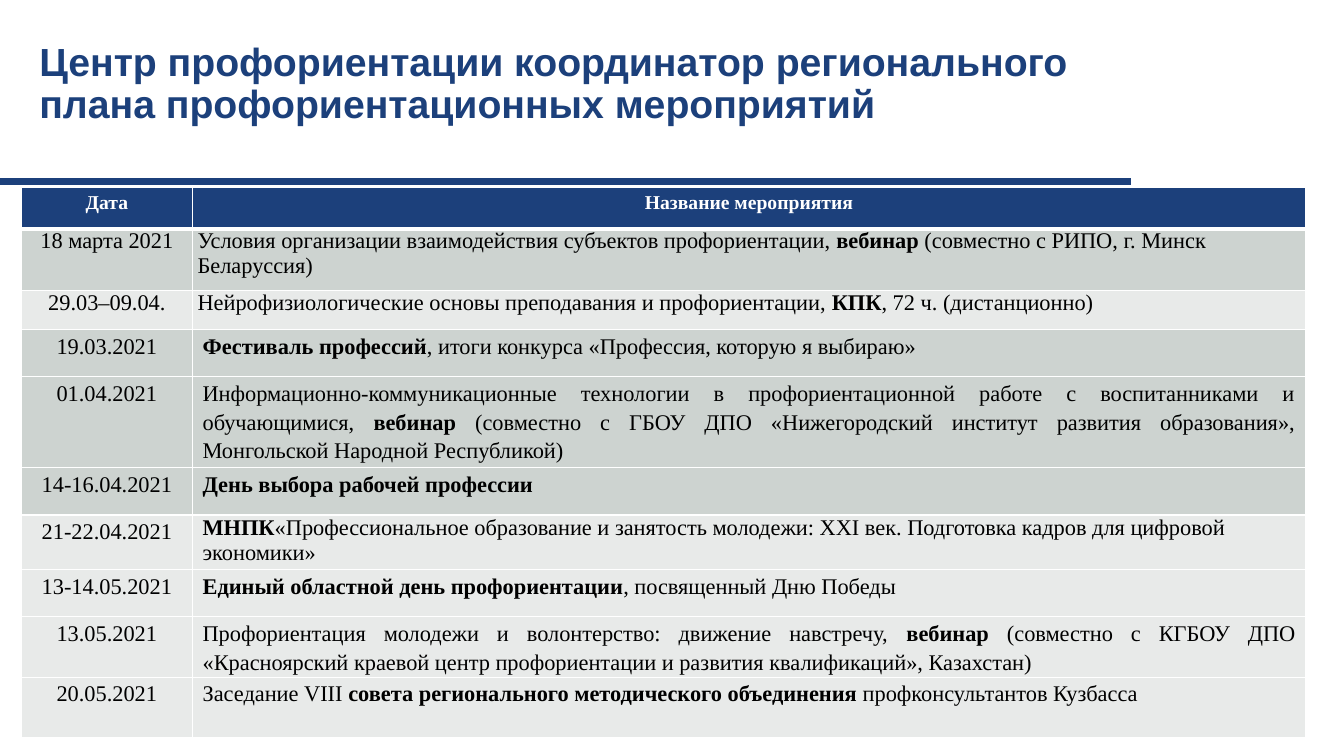
from dataclasses import dataclass

from lxml import etree
from pptx import Presentation
from pptx.dml.color import RGBColor
from pptx.enum.shapes import MSO_CONNECTOR
from pptx.enum.text import MSO_ANCHOR, MSO_AUTO_SIZE, PP_ALIGN
from pptx.oxml.ns import qn
from pptx.util import Pt

LEFT, MID, JUST = PP_ALIGN.LEFT, PP_ALIGN.CENTER, PP_ALIGN.JUSTIFY
TOP = MSO_ANCHOR.TOP
NO_FIT = MSO_AUTO_SIZE.NONE
LINE = MSO_CONNECTOR.STRAIGHT
SCALE = 9144  # EMU in one px, 100 px to the inch
TITLE_ONLY = 5


@dataclass
class Theme:
    navy: str = "1C407B"
    white: str = "FFFFFF"
    black: str = "000000"
    dark: str = "CDD3D0"
    light: str = "E8EAE9"
    sans: str = "Arial"
    serif: str = "Times New Roman"
    title: int = 28
    head: int = 14
    body: int = 16


def px(n):
    return n * SCALE


def rgb(code):
    return RGBColor.from_string(code)


class Deck:
    def __init__(self, theme, wide, high):
        self.theme = theme
        self.prs = Presentation()
        self.prs.slide_width, self.prs.slide_height = px(wide), px(high)
        self.slide = self.prs.slides.add_slide(self.prs.slide_layouts[TITLE_ONLY])

    def text(self, frame, words, font, size, color, align, gap, bold=False):
        """Add runs to the first paragraph; *stars* mark bold words."""
        para = frame.paragraphs[0]
        para.alignment, para.line_spacing = align, gap
        for i, part in enumerate(words.split("*")):
            if part:
                run = para.add_run()
                run.text = part
                run.font.name, run.font.size = font, Pt(size)
                run.font.bold = bold or i % 2 == 1
                run.font.color.rgb = rgb(color)

    def title(self, words, x, y, w, h):
        shape = self.slide.shapes.title
        shape.left, shape.top, shape.width, shape.height = map(px, (x, y, w, h))
        frame = shape.text_frame
        frame.margin_left = frame.margin_right = 0
        frame.margin_top = frame.margin_bottom = 0
        frame.word_wrap, frame.auto_size = True, NO_FIT
        frame.vertical_anchor = TOP
        t = self.theme
        self.text(frame, words, t.sans, t.title, t.navy, LEFT, 0.9, True)

    def rule(self, x, y, w, width):
        line = self.slide.shapes.add_connector(LINE, px(x), px(y), px(x + w), px(y))
        line.line.color.rgb = rgb(self.theme.navy)
        line.line.width = Pt(width)
        etree.SubElement(line._element.spPr, qn("a:effectLst"))

    def edge(self, cell, side, width):
        props = cell._tc.get_or_add_tcPr()
        line = etree.SubElement(props, qn("a:ln" + side), w=str(Pt(width)))
        fill = etree.SubElement(line, qn("a:solidFill"))
        etree.SubElement(fill, qn("a:srgbClr"), val=self.theme.white)

    def cell(self, cell, words, row, align, fill, tight, gap):
        t = self.theme
        head = row == 0
        cell.margin_left = cell.margin_right = px(5 if tight else 10)
        cell.margin_top, cell.margin_bottom = px(0 if tight else 1), 0
        cell.vertical_anchor = TOP
        thick = {0: "B", 1: "T"}.get(row)
        for side in "LRTB":
            self.edge(cell, side, 3 if side == thick else 1)
        cell.fill.solid()
        cell.fill.fore_color.rgb = rgb(fill)
        size, color = (t.head, t.white) if head else (t.body, t.black)
        self.text(cell.text_frame, words, t.serif, size, color, align, gap, head)

    def table(self, rows, x, y, cols, highs):
        shape = self.slide.shapes.add_table(
            len(rows), len(cols), px(x), px(y), px(sum(cols)), px(sum(highs)))
        grid = shape.table
        for col, wide in zip(grid.columns, cols):
            col.width = px(wide)
        for i, (date, name, fill, align, tight, gap) in enumerate(rows):
            grid.rows[i].height = px(highs[i])
            day_gap = 1.0 if tight else 1.15
            self.cell(grid.cell(i, 0), date, i, MID, fill, tight, day_gap)
            self.cell(grid.cell(i, 1), name, i, align, fill, tight, gap)


def main():
    t = Theme()
    deck = Deck(t, 1333, 750)

    # Heading and rule
    deck.rule(0, 180, 1122, 4.5)
    deck.title("Центр профориентации координатор регионального плана "
               "профориентационных мероприятий", 39, 42, 1047, 137)

    # Events: date, name, fill, alignment, tight margins, line spacing
    rows = [
        ("Дата", "Название мероприятия", t.navy, MID, False, 1.15),
        ("18 марта 2021",
         "Условия организации взаимодействия субъектов профориентации, "
         "*вебинар *(совместно с РИПО, г. Минск Беларуссия)",
         t.dark, LEFT, True, 1.0),
        ("29.03–09.04.",
         "Нейрофизиологические основы преподавания и профориентации, "
         "*КПК*, 72 ч. (дистанционно)", t.light, JUST, True, 1.0),
        ("19.03.2021",
         "*Фестиваль профессий*, итоги конкурса «Профессия, которую я выбираю»",
         t.dark, JUST, False, 1.15),
        ("01.04.2021",
         "Информационно-коммуникационные технологии в профориентационной "
         "работе с воспитанниками и обучающимися, *вебинар *(совместно с "
         "ГБОУ ДПО «Нижегородский институт развития образования», "
         "Монгольской Народной Республикой)", t.dark, JUST, False, 1.15),
        ("14-16.04.2021", "*День выбора рабочей профессии*",
         t.dark, JUST, False, 1.15),
        ("21-22.04.2021",
         "*МНПК*«Профессиональное образование и занятость молодежи: XXI век. "
         "Подготовка кадров для цифровой экономики»",
         t.light, LEFT, False, 1.0),
        ("13-14.05.2021",
         "*Единый областной день профориентации*, посвященный Дню Победы",
         t.light, JUST, False, 1.15),
        ("13.05.2021",
         "Профориентация молодежи и волонтерство: движение навстречу, "
         "*вебинар *(совместно с КГБОУ ДПО «Красноярский краевой центр "
         "профориентации и развития квалификаций», Казахстан)",
         t.light, JUST, False, 1.15),
        ("20.05.2021",
         "Заседание VIII *совета регионального методического объединения "
         "*профконсультантов Кузбасса", t.light, JUST, False, 1.15),
    ]
    highs = [41, 61, 39, 47, 90, 47, 54, 47, 60, 60]
    deck.table(rows, 21, 186, [170, 1104], highs)

    deck.prs.save("out.pptx")


if __name__ == "__main__":
    main()
